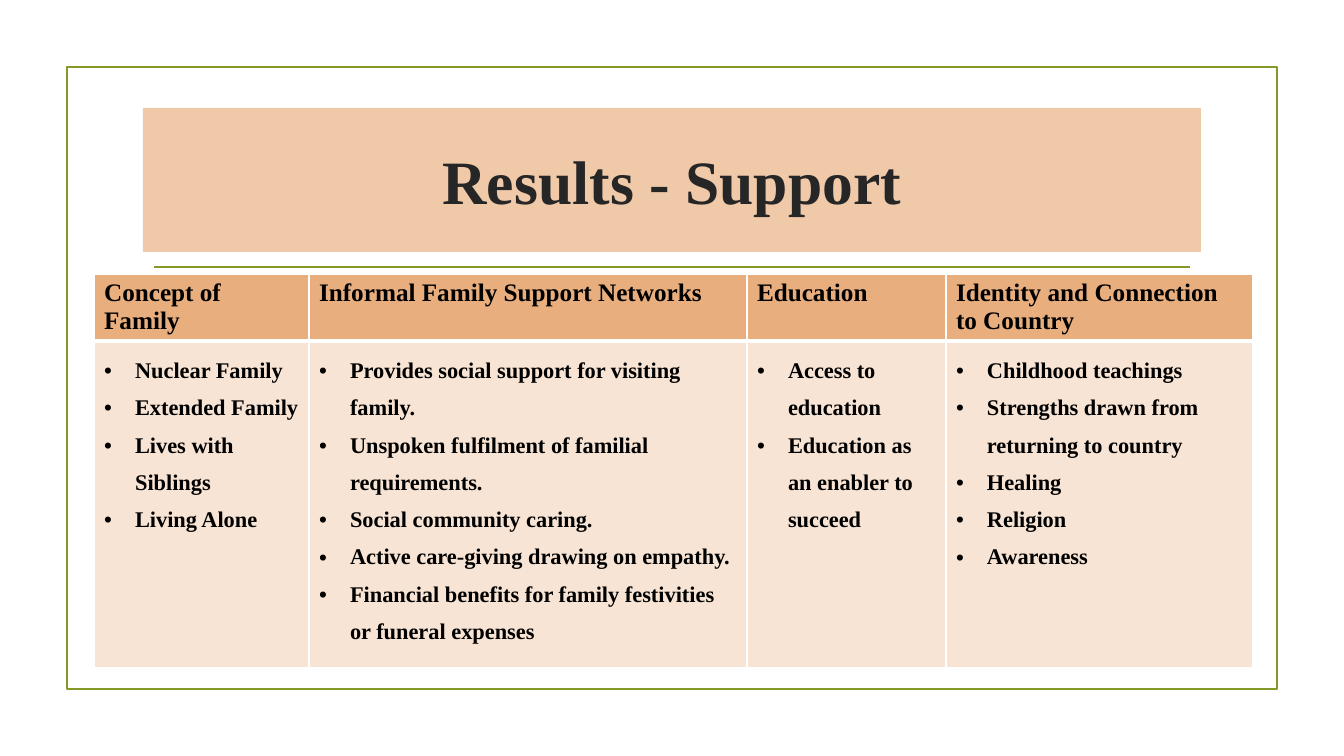
import dataclasses

import lxml.etree
import pptx
import pptx.dml.color
import pptx.enum.shapes
import pptx.enum.text
import pptx.oxml.ns
import pptx.util

SCALE = 914400 / 100.8
FONT = "Times New Roman"
HUES = {
    "olive": "83992A",
    "peach": "F0C9A9",
    "head": "E8AE7E",
    "body": "F7E4D4",
    "ink": "262626",
    "black": "000000",
    "white": "FFFFFF",
}


@dataclasses.dataclass(frozen=True)
class Theme:
    name: str
    width: int
    items: tuple[str, ...]


THEMES = (
    Theme("Concept of Family", 215, (
        "Nuclear Family",
        "Extended Family",
        "Lives with Siblings",
        "Living Alone",
    )),
    Theme("Informal Family Support Networks", 438, (
        "Provides social support for visiting family.",
        "Unspoken fulfilment of familial requirements.",
        "Social community caring.",
        "Active care-giving drawing on empathy.",
        "Financial benefits for family festivities or funeral expenses",
    )),
    Theme("Education", 199, (
        "Access to education",
        "Education as an enabler to succeed",
    )),
    Theme("Identity and Connection to Country", 307, (
        "Childhood teachings",
        "Strengths drawn from returning to country",
        "Healing",
        "Religion",
        "Awareness",
    )),
)
ROWS = (67, 327)


def px(count: int) -> int:
    return round(count * SCALE)


def hue(name: str) -> pptx.dml.color.RGBColor:
    return pptx.dml.color.RGBColor.from_string(HUES[name])


def add(parent, tag: str, **attrs: str):
    return lxml.etree.SubElement(parent, pptx.oxml.ns.qn(tag), attrs)


def write(frame, *lines: str, size: int, color: str = "black",
          align=None, space: float | None = None, indent: int = 0) -> None:
    for rank, line in enumerate(lines):
        para = frame.add_paragraph() if rank else frame.paragraphs[0]
        para.alignment = align
        para.line_spacing = space
        if indent:
            props = para._p.get_or_add_pPr()
            props.set("marL", str(px(indent)))
            props.set("indent", str(-px(indent)))
            add(props, "a:buFont", typeface="Arial")
            add(props, "a:buChar", char="•")
        run = para.add_run()
        run.text = line
        run.font.name = FONT
        run.font.size = pptx.util.Pt(size)
        run.font.bold = True
        run.font.color.rgb = hue(color)


def paint(cell, fill: str, top: int, base: int) -> None:
    props = cell._tc.get_or_add_tcPr()
    for side, width in (("L", 1), ("R", 1), ("T", top), ("B", base)):
        edge = add(props, f"a:ln{side}", w=str(pptx.util.Pt(width)))
        solid = add(edge, "a:solidFill")
        add(solid, "a:srgbClr", val=HUES["white"])
    cell.fill.solid()
    cell.fill.fore_color.rgb = hue(fill)


def stroke(line) -> None:
    line.color.rgb = hue("olive")
    line.width = pptx.util.Pt(1.25)


def decorate(slide) -> None:
    border = slide.shapes.add_shape(
        pptx.enum.shapes.MSO_SHAPE.RECTANGLE, px(67), px(67), px(1210), px(622))
    border.shadow.inherit = False
    border.fill.background()
    stroke(border.line)
    rule = slide.shapes.add_connector(
        pptx.enum.shapes.MSO_CONNECTOR.STRAIGHT, px(154), px(267), px(1190), px(267))
    add(rule._element.spPr, "a:effectLst")
    stroke(rule.line)


def head(slide) -> None:
    title = slide.shapes.title
    title.left, title.top, title.width, title.height = map(px, (143, 108, 1058, 144))
    title.fill.solid()
    title.fill.fore_color.rgb = hue("peach")
    frame = title.text_frame
    frame.word_wrap = True
    frame.auto_size = pptx.enum.text.MSO_AUTO_SIZE.NONE
    frame.vertical_anchor = pptx.enum.text.MSO_ANCHOR.MIDDLE
    write(frame, "Results - Support", size=44, color="ink",
          align=pptx.enum.text.PP_ALIGN.CENTER)


def grid(slide) -> None:
    width = sum(theme.width for theme in THEMES)
    table = slide.shapes.add_table(
        len(ROWS), len(THEMES), px(94), px(274), px(width), px(sum(ROWS))).table
    for row, height in zip(table.rows, ROWS):
        row.height = px(height)
    for col, theme in enumerate(THEMES):
        table.columns[col].width = px(theme.width)
        label, body = table.cell(0, col), table.cell(1, col)
        paint(label, "head", top=1, base=3)
        paint(body, "body", top=3, base=1)
        write(label.text_frame, theme.name, size=18)
        write(body.text_frame, *theme.items, size=16, space=1.5, indent=31)


def main() -> None:
    deck = pptx.Presentation()
    deck.slide_width, deck.slide_height = px(1344), px(756)
    slide = deck.slides.add_slide(deck.slide_layouts.get_by_name("Title Only"))
    decorate(slide)
    head(slide)
    grid(slide)
    deck.save("out.pptx")


if __name__ == "__main__":
    main()
